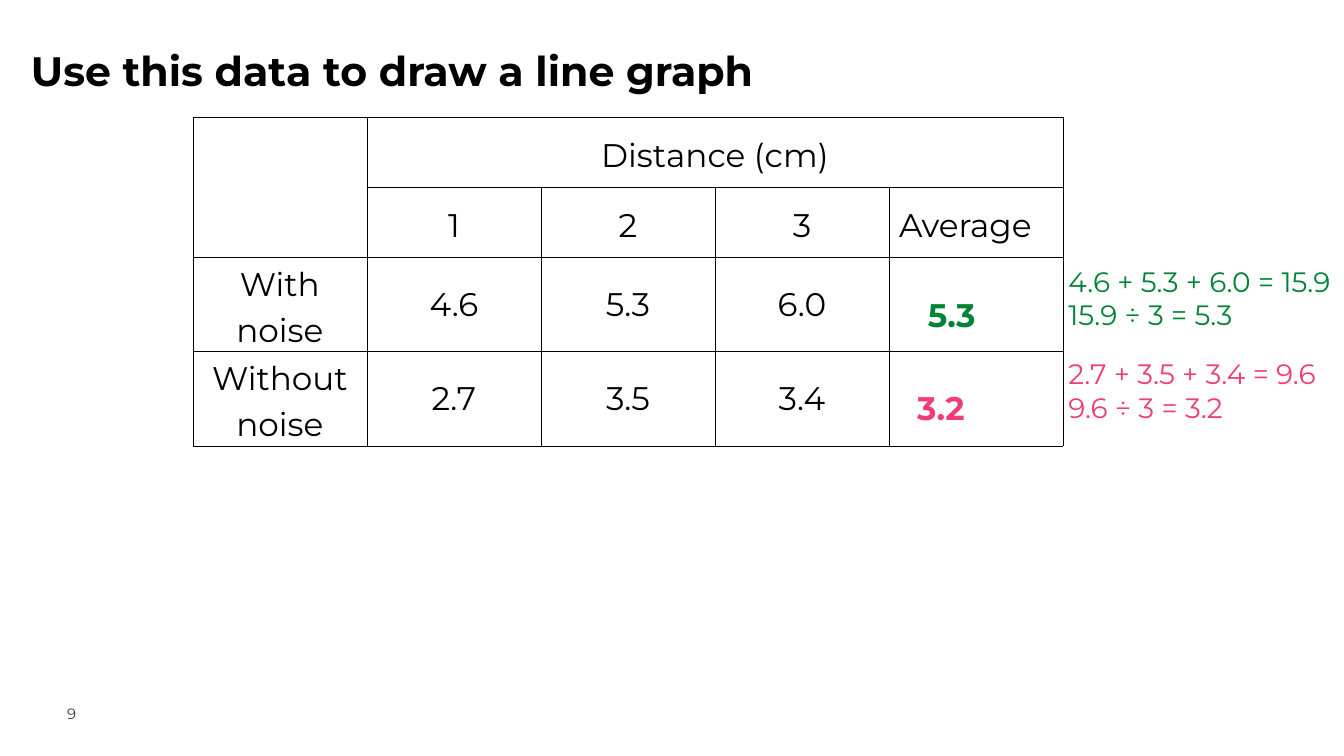
from typing import NamedTuple

from pptx import Presentation
from pptx import util as u
from pptx.dml.color import RGBColor
from pptx.enum import text
from pptx.oxml import parse_xml
from pptx.oxml.ns import nsdecls

FONT = "Montserrat"
BLACK, GREEN, PINK, PLUM = "000000", "008237", "F03C78", "4B3241"
COLUMN_WIDTH = 2.59
ROW_HEIGHTS = (1.04, 1.04, 1.25, 1.25)
ROWS = (
    ("", "Distance (cm)", "", "", ""),
    ("", "1", "2", "3", "Average"),
    ("With noise", "4.6", "5.3", "6.0", ""),
    ("Without noise", "2.7", "3.5", "3.4", ""),
)


class Label(NamedTuple):
    lines: tuple[str, ...]
    left: float
    top: float
    width: float
    height: float
    size: float
    color: str
    bold: bool = False
    margin: float = 0.1


LABELS = (
    Label(("9",), 1, 10.48, 1.57, 0.39, 16, PLUM, margin=0),
    Label(("4.6 + 5.3 + 6.0 = 15.9", "15.9 ÷ 3 = 5.3"), 15.8, 3.83, 4.31, 1.38, 30, GREEN),
    Label(("5.3",), 13.71, 4.29, 2.92, 0.67, 35, GREEN, bold=True),
    Label(("2.7 + 3.5 + 3.4 = 9.6", "9.6 ÷ 3 = 3.2"), 15.8, 5.21, 4.31, 1.38, 30, PINK),
    Label(("3.2",), 13.55, 5.67, 2.92, 0.67, 35, PINK, bold=True),
)
TITLE = Label(("Use this data to draw a line graph",), 0.36, 0.58, 11.27, 1.1, 44, BLACK, bold=True)


def apply_format(target, values: dict) -> None:
    for name, value in values.items():
        setattr(target, name, value)


def format_font(font, size: float, color: str, bold: bool = False) -> None:
    apply_format(font, {"name": FONT, "size": u.Pt(size), "bold": bold})
    font.color.rgb = RGBColor.from_string(color)


def fill_label(shape, label: Label) -> None:
    """Place a text box or placeholder and write the label's lines in it."""
    apply_format(shape, {
        "left": u.Inches(label.left), "top": u.Inches(label.top),
        "width": u.Inches(label.width), "height": u.Inches(label.height),
    })
    frame = shape.text_frame
    margin = u.Inches(label.margin)
    apply_format(frame, {
        "text": "\n".join(label.lines), "word_wrap": True,
        "auto_size": text.MSO_AUTO_SIZE.NONE,
        "vertical_anchor": text.MSO_ANCHOR.TOP,
        "margin_left": margin, "margin_right": margin,
        "margin_top": margin, "margin_bottom": margin,
    })
    for paragraph in frame.paragraphs:
        paragraph.alignment = text.PP_ALIGN.LEFT
        format_font(paragraph.font, label.size, label.color, label.bold)


def add_borders(cell, color: str, points: float) -> None:
    properties = cell._tc.get_or_add_tcPr()
    for side in "LRTB":
        properties.append(parse_xml(
            f'<a:ln{side} {nsdecls("a")} w="{u.Pt(points)}"><a:solidFill>'
            f'<a:srgbClr val="{color}"/></a:solidFill></a:ln{side}>'
        ))


def format_cell(cell, content: str) -> None:
    is_average = content == "Average"
    is_reading = "." in content
    apply_format(cell, {
        "text": content, "vertical_anchor": text.MSO_ANCHOR.MIDDLE,
        "margin_left": u.Inches(0.15 if is_average else 0.03),
        "margin_right": u.Inches(0.03),
        "margin_top": u.Inches(0.02), "margin_bottom": u.Inches(0.02),
    })
    paragraph = cell.text_frame.paragraphs[0]
    paragraph.alignment = text.PP_ALIGN.LEFT if is_average else text.PP_ALIGN.CENTER
    paragraph.line_spacing = 1.0 if is_reading else 1.15
    format_font(paragraph.font, 35, BLACK)
    add_borders(cell, BLACK, 0.75)
    cell.fill.background()


def add_distance_table(slide) -> None:
    columns = len(ROWS[0])
    table = slide.shapes.add_table(
        len(ROWS), columns, u.Inches(2.87), u.Inches(1.75),
        u.Inches(columns * COLUMN_WIDTH), u.Inches(sum(ROW_HEIGHTS)),
    ).table
    apply_format(table, {"first_row": False, "horz_banding": False})
    for column in table.columns:
        column.width = u.Inches(COLUMN_WIDTH)
    for row_index, (contents, height) in enumerate(zip(ROWS, ROW_HEIGHTS)):
        table.rows[row_index].height = u.Inches(height)
        for column_index, content in enumerate(contents):
            format_cell(table.cell(row_index, column_index), content)
    table.cell(0, 0).merge(table.cell(1, 0))
    table.cell(0, 1).merge(table.cell(0, columns - 1))


def main() -> None:
    presentation = Presentation()
    apply_format(presentation, {"slide_width": u.Inches(20), "slide_height": u.Inches(11.25)})
    slide = presentation.slides.add_slide(presentation.slide_layouts[5])
    add_distance_table(slide)
    for label in LABELS:
        fill_label(slide.shapes.add_textbox(0, 0, 0, 0), label)
    fill_label(slide.shapes.title, TITLE)
    presentation.save("out.pptx")


if __name__ == "__main__":
    main()
